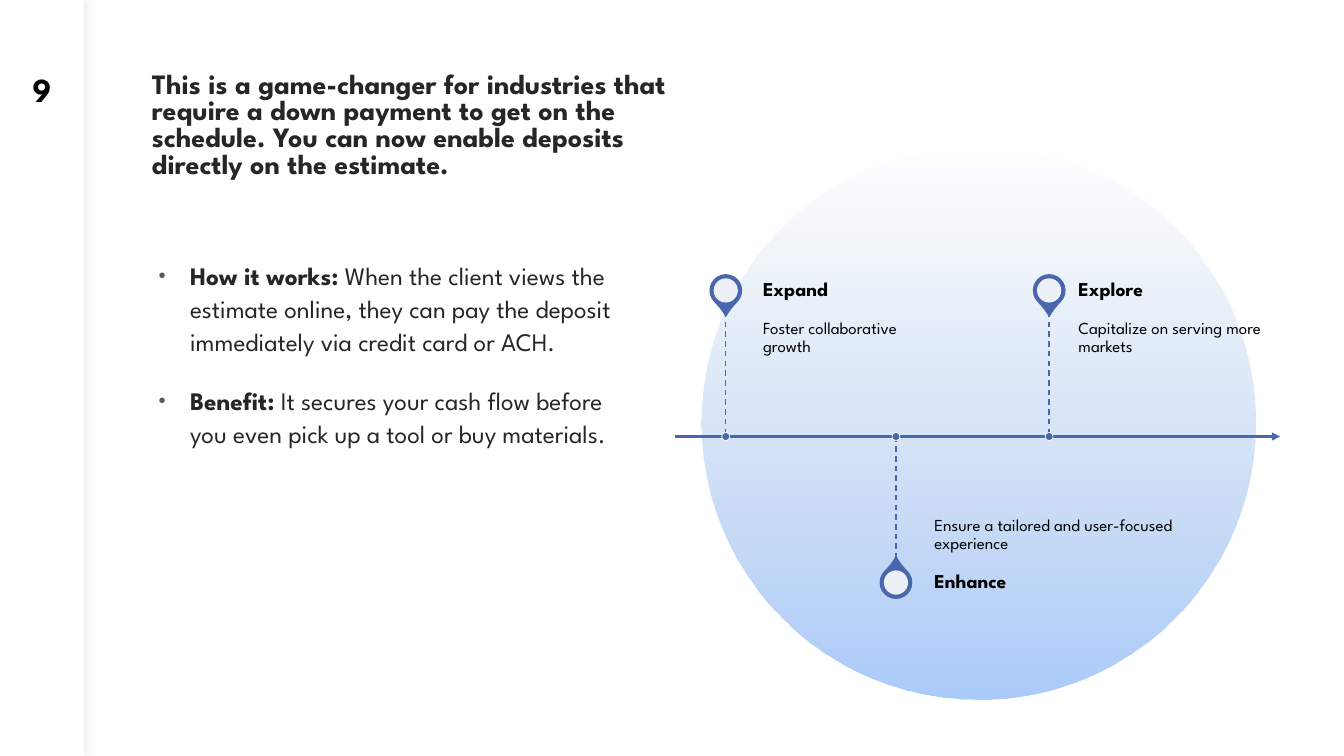
from lxml import etree
from pptx import Presentation
from pptx.dml.color import RGBColor
from pptx.enum import dml, shapes, text
from pptx.oxml import ns
from pptx.util import Cm, Pt

FONT = "League Spartan"
BLUE, WHITE, BLACK, DARK, GREY = "4A66AC", "FFFFFF", "000000", "262626", "595959"
SLIDE_W, SLIDE_H = 33.87, 19.05
SIDEBAR_W = 2.12
TOP = 1.7
HEADING_H = 1.08
PIN, PIN_HOLE, DOT = 0.79, 0.61, 0.2

# Heading, detail lines, stem offset, gap from stem to text, text width, above the axis
MILESTONES = [
    ("Expand", ["Foster collaborative ", "growth"], 1.27, 0.94, 5.18, True),
    ("Enhance", ["Ensure a tailored and user-focused experience"], 5.56, 0.97, 6.35, False),
    ("Explore", ["Capitalize on serving more markets"], 9.42, 0.74, 4.98, True),
]
BULLETS = [
    ("How it works:", " When the client views the estimate online, they can pay"
                      " the deposit immediately via credit card or ACH."),
    ("Benefit:", " It secures your cash flow before you even pick up a tool or buy materials."),
]


def color(hex_string):
    return RGBColor.from_string(hex_string)


def add_xml(parent, tag, **attrs):
    return etree.SubElement(parent, ns.qn(tag), {k: str(v) for k, v in attrs.items()})


def add_alpha(element, percent):
    add_xml(element.find(".//" + ns.qn("a:srgbClr")), "a:alpha", val=percent * 1000)


def add_figure(s, kind, x, y, w, h, fill=None, line=None, weight=1):
    sp = s.shapes.add_shape(kind, Cm(x), Cm(y), Cm(w), Cm(h))
    sp.shadow.inherit = False
    if fill:
        sp.fill.solid()
        sp.fill.fore_color.rgb = color(fill)
    if line:
        sp.line.color.rgb = color(line)
        sp.line.width = Pt(weight)
    else:
        sp.line.fill.background()
    return sp


def add_line(s, x1, y1, x2, y2, weight):
    line = s.shapes.add_connector(shapes.MSO_CONNECTOR.STRAIGHT, Cm(x1), Cm(y1), Cm(x2), Cm(y2))
    line.line.color.rgb = color(BLUE)
    line.line.width = Pt(weight)
    add_xml(line._element.spPr, "a:effectLst")
    return line


def add_box(s, x, y, w, h, anchor=text.MSO_ANCHOR.TOP, insets=(0.25, 0.13, 0.25, 0.13)):
    tf = s.shapes.add_textbox(Cm(x), Cm(y), Cm(w), Cm(h)).text_frame
    tf.word_wrap = True
    tf.vertical_anchor = anchor
    tf.margin_left, tf.margin_top, tf.margin_right, tf.margin_bottom = map(Cm, insets)
    return tf


def add_run(p, words, size, hex_string, bold=False):
    r = p.add_run()
    r.text = words
    r.font.name, r.font.size, r.font.bold = FONT, Pt(size), bold
    r.font.color.rgb = color(hex_string)


def add_backdrop(s, x, y, size):
    sp = add_figure(s, shapes.MSO_SHAPE.OVAL, x, y, size, size)
    sp.fill.gradient()
    sp.fill.gradient_angle = 270
    for stop, hex_string, position in zip(sp.fill.gradient_stops, ("B4CCE7", "ACCBF9"), (0, 1)):
        stop.color.rgb = color(hex_string)
        stop.position = position
    add_alpha(sp._element.spPr, 0)  # the first stop fades out


def add_sidebar(s, x, y, w, h):
    sp = add_figure(s, shapes.MSO_SHAPE.RECTANGLE, x, y, w, h, WHITE)
    effects = sp._element.spPr.find(ns.qn("a:effectLst"))
    shadow = add_xml(effects, "a:outerShdw", blurRad=Pt(10), dist=0, dir=0, rotWithShape=0)
    add_xml(shadow, "a:srgbClr", val=BLACK)
    add_alpha(shadow, 10)
    # Slide number
    p = add_box(s, x, TOP, w, HEADING_H, text.MSO_ANCHOR.MIDDLE).paragraphs[0]
    p.alignment = text.PP_ALIGN.CENTER
    add_run(p, "9", 24, BLACK, True)


def add_title(s, x, y, w, h):
    p = add_box(s, x, y, w, h).paragraphs[0]
    p.line_spacing = 0.8
    add_run(p, "This is a game-changer for industries that require a down payment to get on "
               "the schedule. You can now enable deposits directly on the estimate.", 20, DARK, True)


def add_bullets(s, x, y, w, h):
    tf = add_box(s, x, y, w, h)
    for i, (lead, rest) in enumerate(BULLETS):
        p = tf.add_paragraph() if i else tf.paragraphs[0]
        p.line_spacing = 1.1
        p.space_before = Pt(18 if i else 0)
        props = p._p.get_or_add_pPr()
        props.set("marL", str(Cm(0.91)))
        props.set("indent", str(Cm(-0.79)))
        add_xml(add_xml(props, "a:buClr"), "a:srgbClr", val=GREY)
        add_xml(props, "a:buSzPct", val=80000)
        add_xml(props, "a:buFont", typeface="Arial")
        add_xml(props, "a:buChar", char="•")
        add_run(p, lead, 18, DARK, True)
        add_run(p, rest, 18, DARK)


def add_milestone(s, x, axis_y, stem, milestone):
    heading, detail, _, gap, w, above = milestone
    side = -1 if above else 1
    pin_y = axis_y + side * (stem + HEADING_H / 2)

    # Pin with its hole
    pin = add_figure(s, shapes.MSO_SHAPE.TEAR, x - PIN / 2, pin_y - PIN / 2, PIN, PIN, BLUE, BLUE)
    pin.adjustments[0] = 1.15
    pin.rotation = 135 if above else 315
    hole = add_figure(s, shapes.MSO_SHAPE.OVAL, x - PIN_HOLE / 2, pin_y - PIN_HOLE / 2,
                      PIN_HOLE, PIN_HOLE, WHITE)
    add_alpha(hole._element.spPr, 90)

    # Detail between axis and pin, heading beside the pin
    if above:
        tf = add_box(s, x + gap, axis_y - stem, w, stem, insets=(0, 0.2, 0.2, 0.3))
    else:
        tf = add_box(s, x + gap, axis_y, w, stem, text.MSO_ANCHOR.BOTTOM, (0, 0.3, 0, 0.2))
    p = tf.paragraphs[0]
    p.line_spacing = 0.9
    for i, words in enumerate(detail):
        if i:
            p.add_line_break()
        add_run(p, words, 12, BLACK)
    p = add_box(s, x + gap, pin_y - HEADING_H / 2, w, HEADING_H,
                text.MSO_ANCHOR.MIDDLE, (0, 0, 0.25, 0)).paragraphs[0]
    p.line_spacing = 0.9
    add_run(p, heading, 14, BLACK, True)

    # Dashed stem and its dot on the axis
    start, end = sorted((axis_y, axis_y + side * stem))
    add_line(s, x, start, x, end, 1).line.dash_style = dml.MSO_LINE.DASH
    add_figure(s, shapes.MSO_SHAPE.OVAL, x - DOT / 2, axis_y - DOT / 2, DOT, DOT, BLUE, WHITE, 0.5)


def add_timeline(s, x, y, w, h):
    axis_y = y + h / 2
    axis = add_line(s, x, axis_y, x + w, axis_y, 1.5)
    add_xml(axis.line._get_or_add_ln(), "a:tailEnd", type="triangle")
    for milestone in MILESTONES:
        add_milestone(s, x + milestone[2], axis_y, h / 2 - HEADING_H, milestone)


def main():
    prs = Presentation()
    prs.slide_width, prs.slide_height = Cm(SLIDE_W), Cm(SLIDE_H)
    s = prs.slides.add_slide(prs.slide_layouts[6])
    add_backdrop(s, 17.68, 3.66, 13.97)
    add_sidebar(s, 0, 0, SIDEBAR_W, SLIDE_H)
    add_title(s, 3.58, TOP, 13.67, 4)
    add_bullets(s, 3.63, 6.35, 12.7, 11)
    add_timeline(s, 17.02, 6.78, 15.24, 8.44)
    prs.save("out.pptx")


if __name__ == "__main__":
    main()
